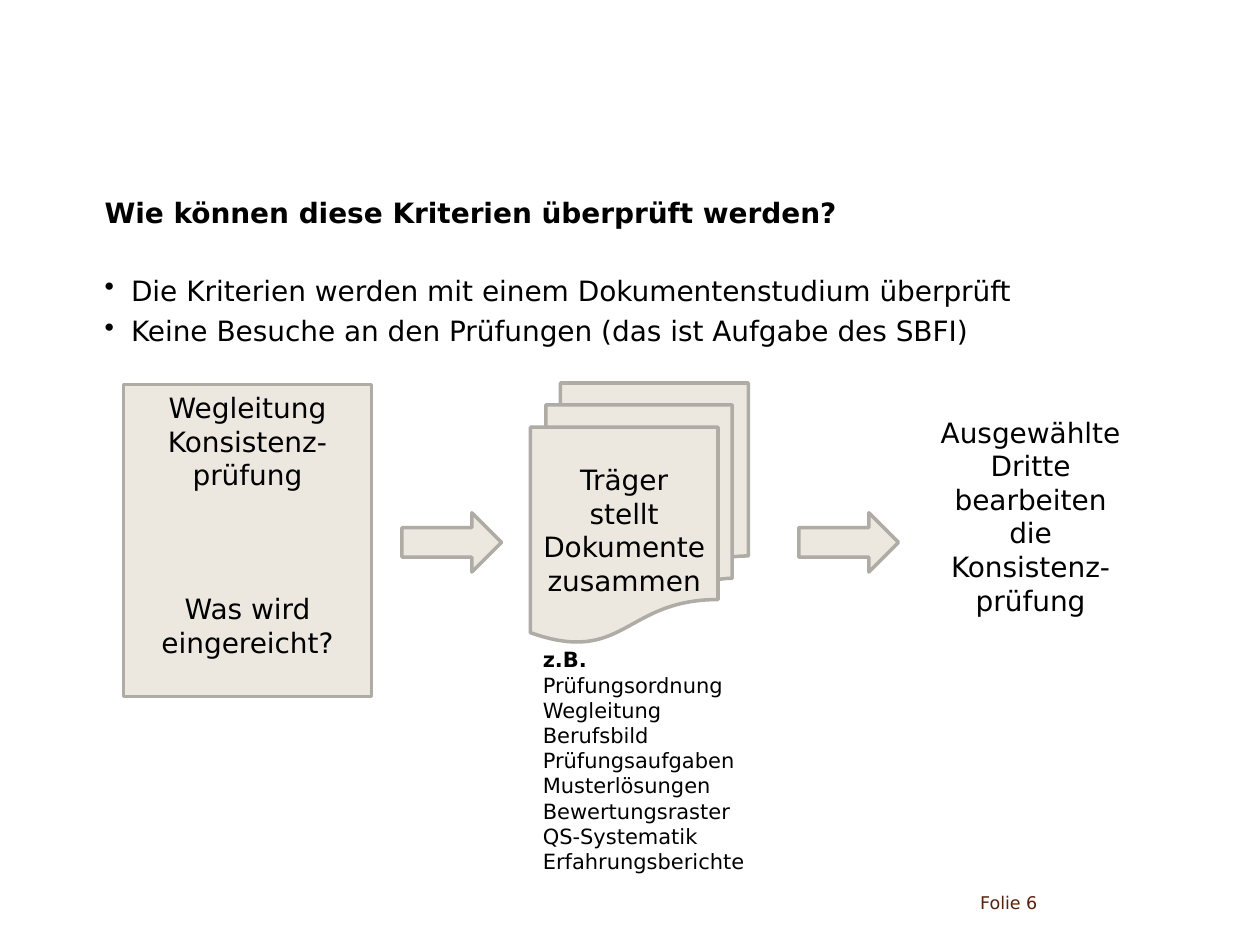
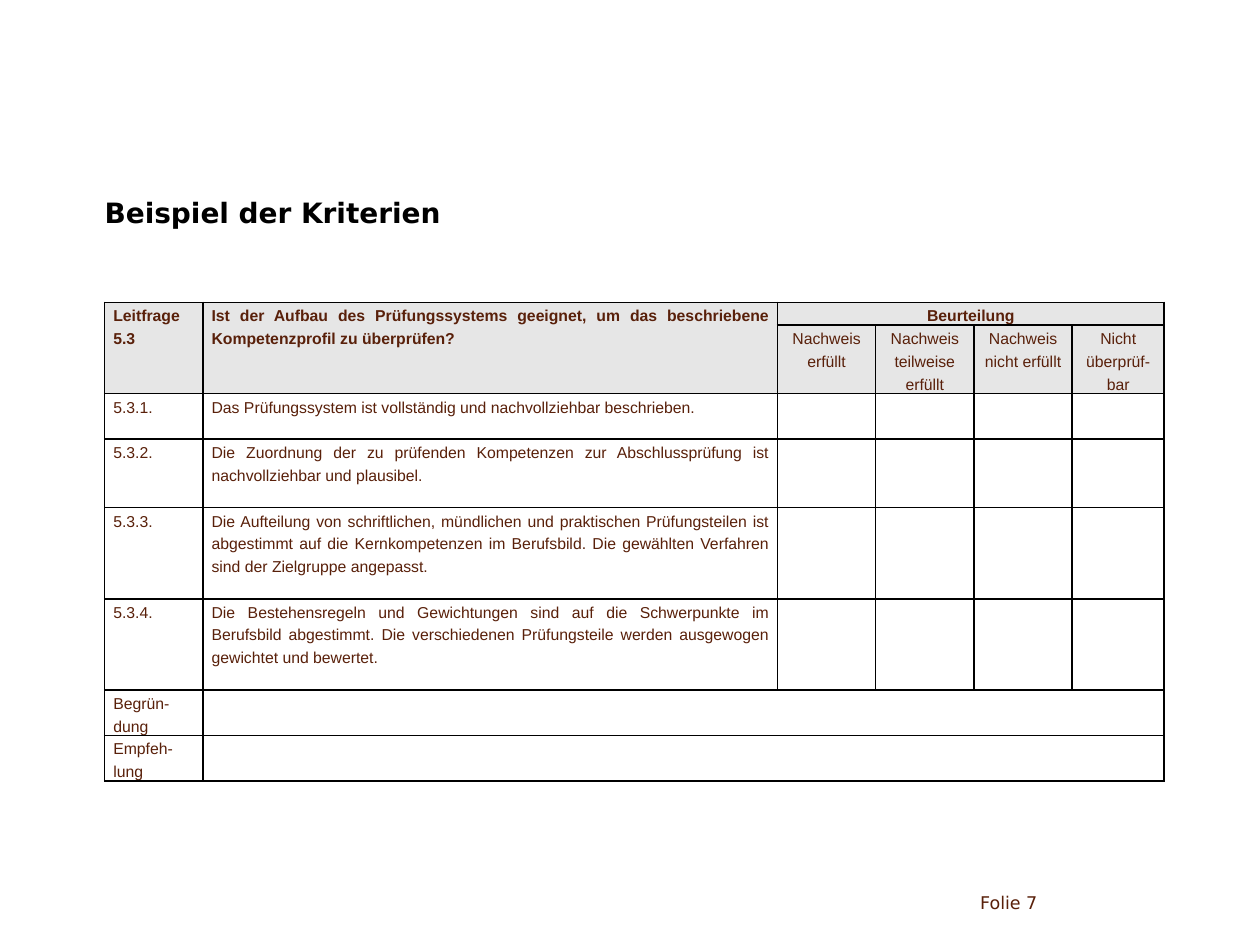
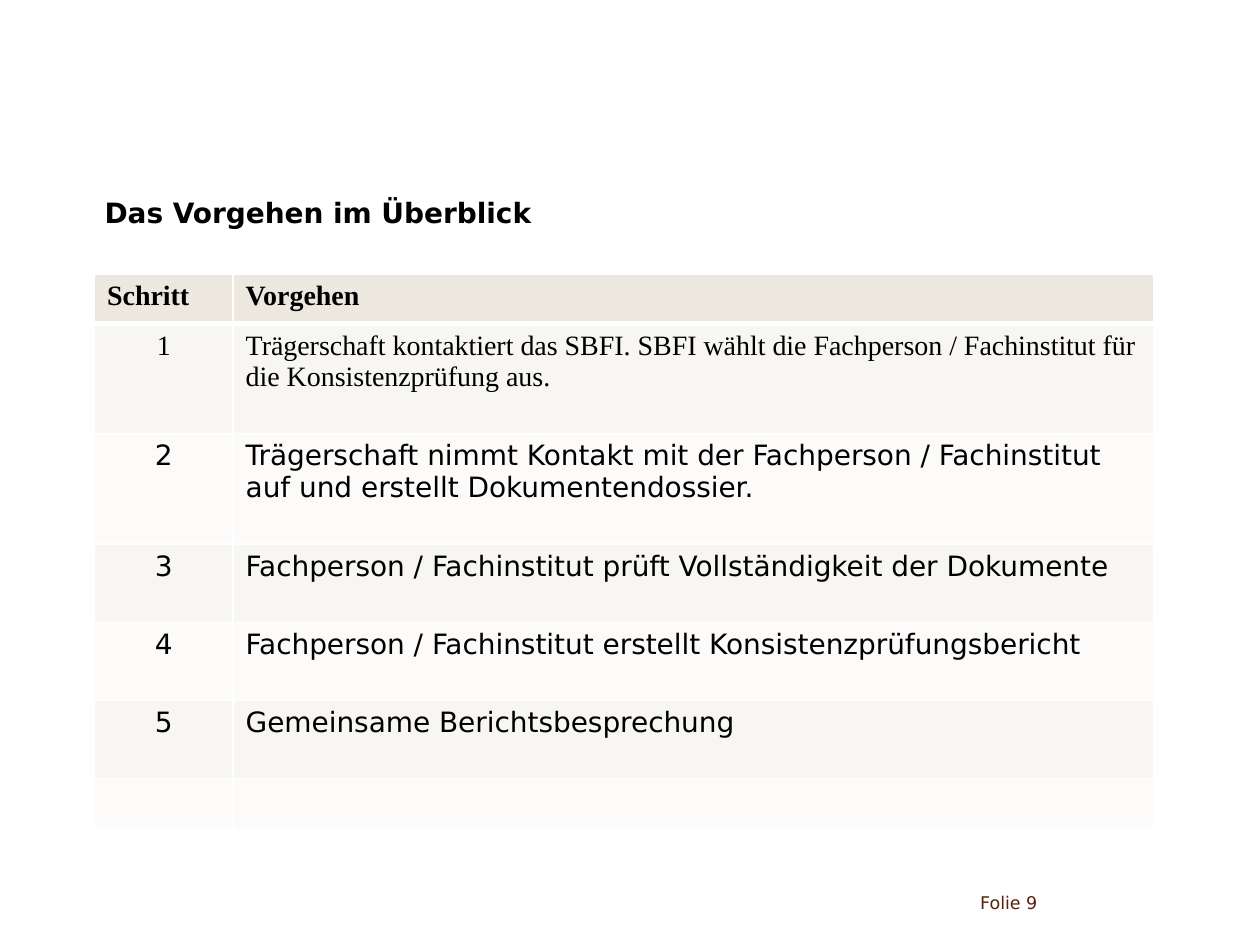
import dataclasses

import lxml.etree
import pptx
import pptx.dml.color
import pptx.enum.shapes
import pptx.enum.text
import pptx.oxml.ns
import pptx.util

Pt = pptx.util.Pt
qn = pptx.oxml.ns.qn
Align = pptx.enum.text.PP_ALIGN
Anchor = pptx.enum.text.MSO_ANCHOR
Shape = pptx.enum.shapes.MSO_SHAPE


@dataclasses.dataclass(frozen=True)
class Ink:
    size: int
    font: str = "DejaVu Sans"
    color: str = "000000"
    bold: bool = False


@dataclasses.dataclass(frozen=True)
class Theme:
    black: str = "000000"
    white: str = "FFFFFF"
    sand: str = "EDE8DF"
    stone: str = "AFACA5"
    grey: str = "E6E6E6"
    bands: tuple = ("F8F6F3", "FCFBF9")
    title: Ink = Ink(16, bold=True)
    body: Ink = Ink(16)
    small: Ink = Ink(12)
    small_bold: Ink = Ink(12, bold=True)
    footer: Ink = Ink(10, color="59200A")
    criteria: Ink = Ink(9, "Arial", "59200A")
    criteria_head: Ink = Ink(9, "Arial", "59200A", True)
    serif: Ink = Ink(16, "Times New Roman")
    serif_head: Ink = Ink(16, "Times New Roman", bold=True)
    table_line: int = 13


def rgb(color):
    return pptx.dml.color.RGBColor.from_string(color)


class Pages:
    COLUMNS, ROWS = 100, 75

    def __init__(self, theme):
        self.theme = theme
        self.deck = pptx.Presentation()
        self.deck.slide_width = pptx.util.Inches(10)
        self.deck.slide_height = pptx.util.Inches(7.5)
        self.page = None

    def across(self, columns):
        return round(self.deck.slide_width * columns / self.COLUMNS)

    def down(self, rows):
        return round(self.deck.slide_height * rows / self.ROWS)

    def place(self, left, top, width, height):
        return self.across(left), self.down(top), self.across(width), self.down(height)

    def start(self, title, number):
        self.page = self.deck.slides.add_slide(self.deck.slide_layouts[6])
        self.text((8.3, 15.5, 84.2, 5.8), [title], self.theme.title)
        self.text((77.8, 70.8, 18, 4.2), [f"Folie {number}"], self.theme.footer)

    def fill_frame(self, frame, lines, ink, align=Align.LEFT):
        frame.word_wrap = True
        frame.text = "\n".join(lines)
        for para in frame.paragraphs:
            para.alignment = align
            for span in para.runs:
                self.style(span, ink)

    def style(self, span, ink):
        span.font.size = Pt(ink.size)
        span.font.name = ink.font
        span.font.bold = ink.bold
        span.font.color.rgb = rgb(ink.color)

    def text(self, area, lines, ink):
        box = self.page.shapes.add_textbox(*self.place(*area))
        frame = box.text_frame
        frame.margin_left = frame.margin_right = 0
        frame.margin_top = frame.margin_bottom = 0
        self.fill_frame(frame, lines, ink)
        return box

    def bullets(self, area, lines, ink):
        box = self.text(area, lines, ink)
        for index, para in enumerate(box.text_frame.paragraphs):
            props = para._p.get_or_add_pPr()
            props.set("marL", str(self.across(2.1)))
            props.set("indent", str(-self.across(2.1)))
            lxml.etree.SubElement(props, qn("a:buChar")).set("char", "•")
            if index:
                para.space_before = Pt(3.8)

    def shape(self, kind, area, fill, line, lines=(), anchor=Anchor.MIDDLE):
        shape = self.page.shapes.add_shape(kind, *self.place(*area))
        shape.shadow.inherit = False
        shape.fill.solid()
        shape.fill.fore_color.rgb = rgb(fill)
        shape.line.color.rgb = rgb(line)
        shape.line.width = Pt(2)
        shape.text_frame.vertical_anchor = anchor
        if lines:
            self.fill_frame(shape.text_frame, lines, self.theme.body, Align.CENTER)
        return shape

    def table(self, corner, columns, rows):
        area = (*corner, sum(columns), sum(rows))
        holder = self.page.shapes.add_table(len(rows), len(columns), *self.place(*area))
        table = holder.table
        table.first_row = table.horz_banding = False
        for column, width in zip(table.columns, columns):
            column.width = self.across(width)
        for row, height in zip(table.rows, rows):
            row.height = self.down(height)
        return table

    def cell(self, cell, words, ink, fill, align, line, widths=(1, 1, 1, 1)):
        self.fill_frame(cell.text_frame, [words], ink, align)
        if not words:
            cell.text_frame.paragraphs[0].line_spacing = Pt(self.theme.table_line)
        props = cell._tc.get_or_add_tcPr()
        for side, width in zip("LRTB", widths):
            border = lxml.etree.SubElement(props, qn(f"a:ln{side}"))
            border.set("w", str(Pt(width)))
            paint = lxml.etree.SubElement(border, qn("a:solidFill"))
            lxml.etree.SubElement(paint, qn("a:srgbClr")).set("val", line)
        cell.fill.solid()
        cell.fill.fore_color.rgb = rgb(fill)


def process_page(pages):
    theme = pages.theme
    pages.start("Wie können diese Kriterien überprüft werden?", 6)
    pages.bullets((8.3, 21.7, 84.2, 42.5), [
        "Die Kriterien werden mit einem Dokumentenstudium überprüft",
        "Keine Besuche an den Prüfungen (das ist Aufgabe des SBFI)",
    ], theme.body)
    pages.shape(Shape.FLOWCHART_MULTIDOCUMENT, (42.1, 30.4, 17.3, 20.6), theme.sand,
                theme.stone, ["Träger stellt Dokumente zusammen"])
    guide = pages.shape(Shape.RECTANGLE, (9.8, 30.5, 19.7, 24.8), theme.sand, theme.stone,
                        ["Wegleitung", "Konsistenz-prüfung", "Was wird eingereicht?"],
                        Anchor.TOP)
    guide.text_frame.paragraphs[2].space_before = Pt(57.5)
    for left in (31.9, 63.4):
        pages.shape(Shape.RIGHT_ARROW, (left, 40.7, 7.9, 4.7), theme.sand, theme.stone)
    pages.shape(Shape.RECTANGLE, (72.8, 30.5, 18, 20.9), theme.white, theme.white,
                ["Ausgewählte Dritte", "bearbeiten die", "Konsistenz-", "prüfung"])
    examples = pages.text((42.1, 54.1, 19.7, 16.5), [
        "z.B.", "Prüfungsordnung", "Wegleitung", "Berufsbild", "Prüfungsaufgaben",
        "Musterlösungen", "Bewertungsraster", "QS-Systematik", "Erfahrungsberichte",
    ], theme.small).text_frame
    examples.vertical_anchor = Anchor.MIDDLE
    examples.margin_left = examples.margin_right = pages.across(1)
    examples.margin_top, examples.margin_bottom = pages.down(0.5), pages.down(4.5)
    pages.style(examples.paragraphs[0].runs[0], theme.small_bold)


def criteria_page(pages):
    theme = pages.theme
    pages.start("Beispiel der Kriterien", 7)
    rows = [
        ["Leitfrage 5.3", "Ist der Aufbau des Prüfungssystems geeignet, um das beschriebene "
         "Kompetenzprofil zu überprüfen?", "Beurteilung"],
        ["", "", "Nachweis erfüllt", "Nachweis teilweise erfüllt", "Nachweis nicht erfüllt",
         "Nicht überprüf-bar"],
        ["5.3.1.", "Das Prüfungssystem ist vollständig und nachvollziehbar beschrieben."],
        ["5.3.2.", "Die Zuordnung der zu prüfenden Kompetenzen zur Abschlussprüfung ist "
         "nachvollziehbar und plausibel."],
        ["5.3.3.", "Die Aufteilung von schriftlichen, mündlichen und praktischen "
         "Prüfungsteilen ist abgestimmt auf die Kernkompetenzen im Berufsbild. Die "
         "gewählten Verfahren sind der Zielgruppe angepasst."],
        ["5.3.4.", "Die Bestehensregeln und Gewichtungen sind auf die Schwerpunkte im "
         "Berufsbild abgestimmt. Die verschiedenen Prüfungsteile werden ausgewogen "
         "gewichtet und bewertet."],
        ["Begrün-dung"],
        ["Empfeh-lung"],
    ]
    line_counts = (1, 3, 2, 3, 4, 4, 2, 2)
    columns = (7.8, 45.6, 7.8, 7.8, 7.8, 7.3)
    table = pages.table((8.3, 24), columns, [1.81 * count for count in line_counts])
    for r, words in enumerate(rows):
        for c in range(len(columns)):
            cell = table.cell(r, c)
            rating = c > 1
            pages.cell(cell, words[c] if c < len(words) else "",
                       theme.criteria if r else theme.criteria_head,
                       theme.grey if r < 2 else theme.white,
                       Align.CENTER if rating else Align.JUSTIFY, theme.black,
                       (1, 1, 1.5 if rating and r == 1 else 1, 1.5 if rating and r == 0 else 1))
            cell.margin_left = cell.margin_right = pages.across(0.7)
            cell.margin_top = cell.margin_bottom = 0
            cell.text_frame.paragraphs[0].line_spacing = Pt(theme.table_line)
    for first, last in (((0, 0), (1, 0)), ((0, 1), (1, 1)), ((0, 2), (0, 5)),
                        ((6, 1), (6, 5)), ((7, 1), (7, 5))):
        table.cell(*first).merge(table.cell(*last))


def steps_page(pages):
    theme = pages.theme
    pages.start("Das Vorgehen im Überblick", 9)
    rows = [
        ("Schritt", "Vorgehen"),
        ("1", "Trägerschaft kontaktiert das SBFI. SBFI wählt die Fachperson / Fachinstitut "
         "für die Konsistenzprüfung aus."),
        ("2", "Trägerschaft nimmt Kontakt mit der Fachperson / Fachinstitut auf und "
         "erstellt Dokumentendossier."),
        ("3", "Fachperson / Fachinstitut prüft Vollständigkeit der Dokumente"),
        ("4", "Fachperson / Fachinstitut erstellt Konsistenzprüfungsbericht"),
        ("5", "Gemeinsame Berichtsbesprechung"),
        ("", ""),
    ]
    inks = [theme.serif_head, theme.serif] + [theme.body] * 5
    table = pages.table((7.5, 21.8), (11, 73.1), (3.9, 8.7, 8.8, 6.2, 6.2, 6.2, 3.9))
    for r, words in enumerate(rows):
        fill = theme.bands[(r - 1) % 2] if r else theme.sand
        widths = (1, 1, 3 if r == 1 else 1, 1 if r else 3)
        for c, entry in enumerate(words):
            align = Align.CENTER if r and c == 0 else Align.LEFT
            pages.cell(table.cell(r, c), entry, inks[r], fill, align, theme.white, widths)


def main():
    pages = Pages(Theme())
    process_page(pages)
    criteria_page(pages)
    steps_page(pages)
    pages.deck.save("out.pptx")


if __name__ == "__main__":
    main()
